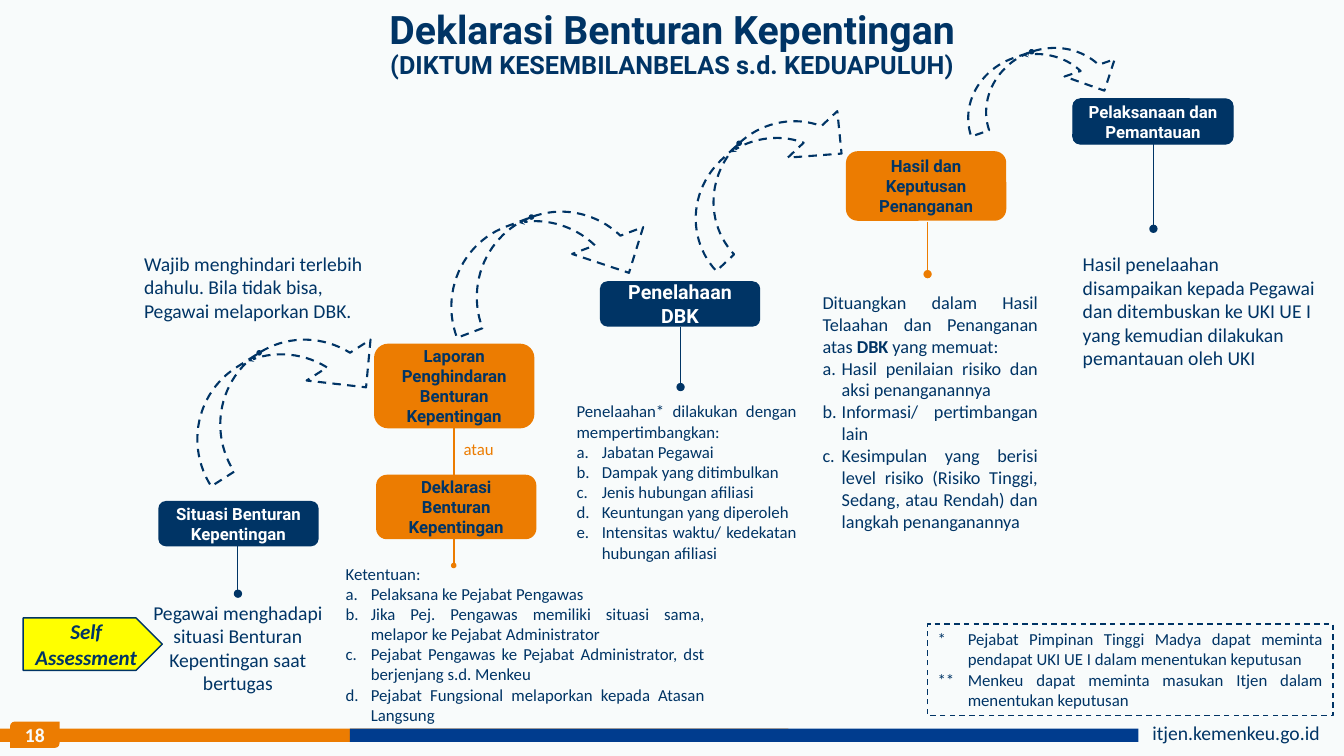
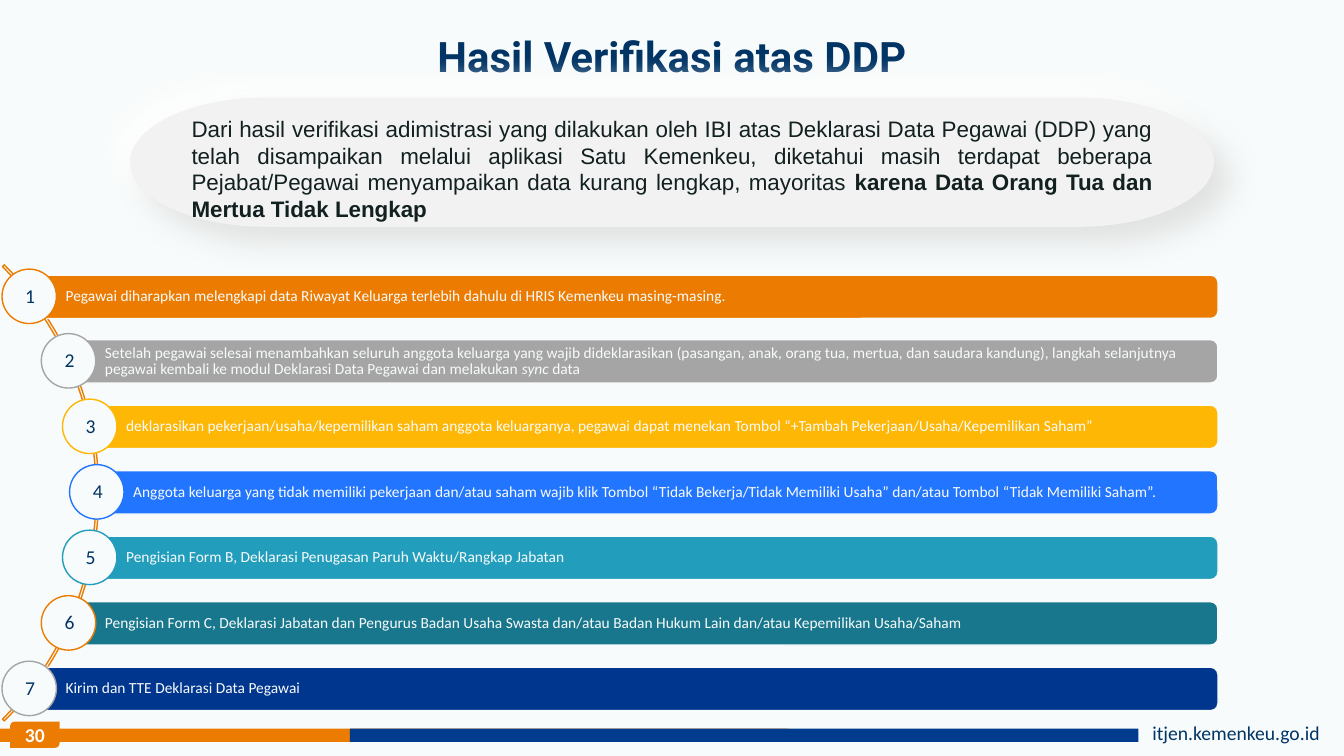
from lxml.etree import Element, SubElement
from pptx import Presentation
from pptx.dml.color import RGBColor
from pptx.enum.dml import MSO_LINE
from pptx.enum.shapes import MSO_CONNECTOR, MSO_SHAPE as SHAPE
from pptx.enum.text import MSO_ANCHOR as ANCHOR, MSO_AUTO_SIZE, PP_ALIGN as ALIGN
from pptx.oxml.ns import qn
from pptx.util import Pt

PX = 9144  # 100 px to the inch
COLORS = {
    "paper": "F8FBFB", "navy": "003465", "orange": "EC7C01", "blue": "003C8E",
    "white": "FFFFFF", "yellow": "FFFF00", "pill": "F2F2F2", "ink": "122020",
    "grey": "A5A5A5", "amber": "FEB705", "azure": "2275FE", "teal": "229EBC",
    "deep teal": "19778D", "royal": "01368F", "shade": "BFBFBF",
}
RGB = {name: RGBColor.from_string(code) for name, code in COLORS.items()}
TIGHT = (10, 10, 10, 10)


def box(s, kind, at, fill=None, line=None, weight=1, dash=False):
    """Add a preset shape, or a text box when kind is None."""
    at = [v * PX for v in at]
    if kind is None:
        return s.shapes.add_textbox(*at)
    sp = s.shapes.add_shape(kind, *at)
    sp.shadow.inherit = False
    if fill:
        sp.fill.solid()
        sp.fill.fore_color.rgb = RGB[fill]
    else:
        sp.fill.background()
    if line:
        sp.line.color.rgb = RGB[line]
        sp.line.width = Pt(weight)
        if dash:
            sp.line.dash_style = MSO_LINE.DASH
    else:
        sp.line.fill.background()
    return sp


def write(sp, paras, size, color="navy", font="Calibri", bold=False, italic=False,
          align=ALIGN.LEFT, anchor=ANCHOR.TOP, inset=(10, 5, 10, 5),
          hang=0, lettered=False, spacing=None, mark="bold"):
    """Fill a shape; text between bars gets the mark, letters start after the lead-in."""
    tf = sp.text_frame
    tf.word_wrap = True
    tf.auto_size = MSO_AUTO_SIZE.NONE
    tf.vertical_anchor = anchor
    tf.margin_left, tf.margin_top, tf.margin_right, tf.margin_bottom = [v * PX for v in inset]
    for i, text in enumerate(paras):
        p = tf.paragraphs[0] if i == 0 else tf.add_paragraph()
        p.alignment = align
        if spacing:
            p.line_spacing = spacing
        if hang and (i or not lettered):
            pPr = p._p.get_or_add_pPr()
            pPr.set("marL", str(hang * PX))
            pPr.set("indent", str(-hang * PX))
            if lettered:
                SubElement(pPr, qn("a:buAutoNum"), type="alphaLcPeriod")
        for j, part in enumerate(text.split("|")):
            r = p.add_run()
            r.text = part
            r.font.size, r.font.name = Pt(size), font
            r.font.bold, r.font.italic = bold, italic
            r.font.color.rgb = RGB[color]
            if j % 2:
                setattr(r.font, mark, True)


prs = Presentation()
prs.slide_width, prs.slide_height = 1333 * PX, 750 * PX
background = prs.slide_master.background.fill
background.solid()
background.fore_color.rgb = RGB["paper"]
layout = prs.slide_layouts[5]

# Titles and page numbers
pages = [
    ("18", "Deklarasi Benturan Kepentingan\v(DIKTUM KESEMBILANBELAS s.d. KEDUAPULUH)",
     (28, 18), (179, -4, 975, 98)),
    ("30", "Hasil Verifikasi atas DDP", (30,), (169, 9, 995, 98)),
]
for number, title, sizes, at in pages:
    s = prs.slides.add_slide(layout)
    sp = s.shapes.title
    sp.left, sp.top, sp.width, sp.height = [v * PX for v in at]
    tf = sp.text_frame
    tf.text = title
    tf.auto_size = MSO_AUTO_SIZE.NONE
    tf.vertical_anchor = ANCHOR.MIDDLE
    p = tf.paragraphs[0]
    p.alignment = ALIGN.CENTER
    p.line_spacing = 0.9
    for r, size in zip(p.runs, sizes):
        r.font.name, r.font.size, r.font.bold = "Roboto", Pt(size), True
        r.font.color.rgb = RGB["navy"]
    chip = box(s, SHAPE.ROUND_2_DIAG_RECTANGLE, (10, 716, 49, 26), "orange")
    write(chip, [number], 14, "paper", bold=True, align=ALIGN.CENTER,
          anchor=ANCHOR.MIDDLE, inset=(4, 0, 4, 0))

# Footer, moved into the layout that both slides use
s = prs.slides[0]
site = box(s, None, (1133, 710, 191, 54))
write(site, ["itjen.kemenkeu.go.id"], 14)
footer = [
    box(s, SHAPE.RECTANGLE, (0, 723, 782, 13), "orange"),
    box(s, SHAPE.RECTANGLE, (347, 723, 782, 13), "blue"),
    site,
]
for i, sp in enumerate(footer):
    sp.element.nvSpPr.cNvPr.set("id", str(101 + i))
    layout.shapes.element.append(sp.element)

# Declaration steps
drops = [
    (236, 533, 589, "navy", 0.75), (450, 417, 561, "orange", 1.5),
    (675, 324, 384, "navy", 0.75), (920, 220, 272, "orange", 0.75),
    (1144, 134, 227, "navy", 0.75),
]
for x, top, bottom, color, weight in drops:
    c = s.shapes.add_connector(MSO_CONNECTOR.STRAIGHT, x * PX, top * PX, x * PX, bottom * PX)
    c.line.color.rgb = RGB[color]
    c.line.width = Pt(weight)
    spPr = c.element.spPr
    dot = "sm" if weight > 1 else "med"
    SubElement(spPr.find(qn("a:ln")), qn("a:tailEnd"), type="oval", w=dot, len=dot)
    SubElement(spPr, qn("a:effectLst"))

steps = [
    ("Situasi Benturan Kepentingan", 157, 497, 45, "navy", None, 12),
    ("Laporan Penghindaran Benturan Kepentingan", 371, 341, 84, "orange", None, 12),
    ("Deklarasi Benturan Kepentingan", 373, 471, 64, "orange", None, 12),
    ("Penelahaan DBK", 595, 279, 45, "navy", None, 14),
    ("Hasil dan Keputusan Penanganan", 839, 150, 69, "orange", None, 12),
    ("Pelaksanaan dan Pemantauan", 1064, 98, 45, "navy", "navy", 12),
]
for text, x, y, h, fill, line, size in steps:
    write(box(s, SHAPE.ROUNDED_RECTANGLE, (x, y, 159, h), fill, line, 0.75), [text], size,
          "white" if fill == "navy" else "navy", "Roboto", bold=True,
          align=ALIGN.CENTER, anchor=ANCHOR.MIDDLE, inset=TIGHT)

write(box(s, None, (131, 608, 210, 69)),
      ["Pegawai menghadapi situasi Benturan Kepentingan saat bertugas"], 14,
      align=ALIGN.CENTER, anchor=ANCHOR.MIDDLE, inset=TIGHT)
write(box(s, None, (133, 250, 262, 69)),
      ["Wajib menghindari terlebih dahulu. Bila tidak bisa, Pegawai melaporkan DBK."], 14,
      anchor=ANCHOR.MIDDLE, inset=TIGHT)
write(box(s, None, (450, 430, 51, 30)), ["atau"], 12, "orange")
write(box(s, None, (1064, 245, 255, 148)),
      ["Hasil penelaahan disampaikan kepada Pegawai dan ditembuskan ke UKI UE I "
       "yang kemudian dilakukan pemantauan oleh UKI"], 14)

write(box(s, None, (562, 380, 238, 196)), [
    "Penelaahan* dilakukan dengan mempertimbangkan:",
    "Jabatan Pegawai",
    "Dampak yang ditimbulkan",
    "Jenis hubungan afiliasi",
    "Keuntungan yang diperoleh",
    "Intensitas waktu/ kedekatan hubungan afiliasi",
], 12, align=ALIGN.JUSTIFY, anchor=ANCHOR.MIDDLE, inset=TIGHT, hang=25, lettered=True)
write(box(s, None, (333, 551, 376, 176)), [
    "Ketentuan:",
    "Pelaksana ke Pejabat Pengawas",
    "Jika Pej. Pengawas memiliki situasi sama, melapor ke Pejabat Administrator",
    "Pejabat Pengawas ke Pejabat Administrator, dst berjenjang s.d. Menkeu",
    "Pejabat Fungsional melaporkan kepada Atasan Langsung",
], 12, align=ALIGN.JUSTIFY, anchor=ANCHOR.MIDDLE, inset=TIGHT, hang=25, lettered=True)
write(box(s, None, (806, 284, 233, 251)), [
    "Dituangkan dalam Hasil Telaahan dan Penanganan atas |DBK |yang memuat:",
    "Hasil penilaian risiko dan aksi penanganannya",
    "Informasi/ pertimbangan lain",
    "Kesimpulan yang berisi level risiko (Risiko Tinggi, Sedang, atau Rendah) "
    "dan langkah penanganannya",
], 13, align=ALIGN.JUSTIFY, hang=19, lettered=True)
write(box(s, SHAPE.RECTANGLE, (920, 619, 402, 91), "paper", "navy", dash=True), [
    "*\tPejabat Pimpinan Tinggi Madya dapat meminta pendapat UKI UE I "
    "dalam menentukan keputusan",
    "**\tMenkeu dapat meminta masukan Itjen dalam menentukan keputusan",
], 12, align=ALIGN.JUSTIFY, hang=30)

arrows = [
    ((236, 277, 86, 220), 237.4), ((498, 146, 86, 220), 249.3),
    ((720, 69, 77, 204), 226.8), ((1002, -3, 60, 166), 251),
]
for at, angle in arrows:
    sp = box(s, SHAPE.CURVED_LEFT_ARROW, at, None, "navy", 1.5, dash=True)
    sp.rotation = angle
    for i, value in enumerate((0.314, 0.876, 0.436)):
        sp.adjustments[i] = value
    ln = sp.element.spPr.find(qn("a:ln"))
    SubElement(ln, qn("a:headEnd"), type="oval", w="sm", len="sm")
    SubElement(ln, qn("a:tailEnd"), type="stealth", w="sm", len="sm")
write(box(s, SHAPE.PENTAGON, (23, 613, 138, 52), "yellow", "navy"), ["Self Assessment"], 15,
      bold=True, italic=True, align=ALIGN.CENTER, anchor=ANCHOR.MIDDLE)

# Verification finding on a pill with a light and a dark shadow
s = prs.slides[1]
left, top, right, bottom, middle = 129, 97, 1204, 225, 161
start = (left, middle)
outline = [  # end of each edge, and the corner that a curved edge rounds off
    ((263, top), (left, top)), ((1070, top), None),
    ((right, middle), (right, top)), ((1070, bottom), (right, bottom)),
    ((263, bottom), None), (start, (left, bottom)),
]
for color, alpha, angle in (("white", 100, 225), ("shade", 40, 45)):
    builder = s.shapes.build_freeform(*start, scale=PX)
    builder.add_line_segments([end for end, corner in outline])
    sp = builder.convert_to_shape()
    last = start
    for edge, (end, corner) in zip(list(sp.element.iter(qn("a:lnTo"))), outline):
        if corner:
            edge.tag = qn("a:cubicBezTo")
            for i, (px, py) in enumerate((last, end)):
                x = px + 0.55 * (corner[0] - px) - left
                y = py + 0.55 * (corner[1] - py) - top
                edge.insert(i, Element(qn("a:pt"), x=str(round(x)), y=str(round(y))))
        last = end
    sp.fill.solid()
    sp.fill.fore_color.rgb = RGB["pill"]
    sp.line.fill.background()
    sp.shadow.inherit = False
    effects = sp.element.spPr.find(qn("a:effectLst"))
    shadow = SubElement(effects, qn("a:outerShdw"), blurRad=str(Pt(20)), dist=str(Pt(15)),
                        dir=str(angle * 60000), algn="ctr", rotWithShape="0")
    tint = SubElement(shadow, qn("a:srgbClr"), val=COLORS[color])
    SubElement(tint, qn("a:alpha"), val=str(alpha * 1000))
write(box(s, None, (190, 109, 953, 118)), [
    "Dari hasil verifikasi adimistrasi yang dilakukan oleh IBI atas Deklarasi Data Pegawai "
    "(DDP) yang telah disampaikan melalui aplikasi Satu Kemenkeu, diketahui masih terdapat "
    "beberapa Pejabat/Pegawai menyampaikan data kurang lengkap, mayoritas "
    "|karena Data Orang Tua dan Mertua Tidak Lengkap",
], 16, "ink", "Arial", align=ALIGN.JUSTIFY, inset=(0, 5, 0, 5))

# Numbered actions along an arc
arc = box(s, SHAPE.BLOCK_ARC, (-542, 169, 640, 640), None, "orange")
for i, value in enumerate((189, 27, 0.004)):
    arc.adjustments[i] = value
actions = [
    (29, "orange", "orange", "Pegawai diharapkan melengkapi data Riwayat Keluarga terlebih "
     "dahulu di HRIS Kemenkeu masing-masing."),
    (68, "grey", "grey", "Setelah pegawai selesai menambahkan seluruh anggota keluarga yang "
     "wajib dideklarasikan (pasangan, anak, orang tua, mertua, dan saudara kandung), langkah "
     "selanjutnya pegawai kembali ke modul Deklarasi Data Pegawai dan melakukan |sync| data"),
    (89, "amber", "amber", "deklarasikan pekerjaan/usaha/kepemilikan saham anggota keluarganya, "
     "pegawai dapat menekan Tombol “+Tambah Pekerjaan/Usaha/Kepemilikan Saham”"),
    (96, "azure", "azure", "Anggota keluarga yang tidak memiliki pekerjaan dan/atau saham wajib "
     "klik Tombol “Tidak Bekerja/Tidak Memiliki Usaha” dan/atau Tombol “Tidak Memiliki Saham”."),
    (89, "teal", "teal", "Pengisian Form B, Deklarasi Penugasan Paruh Waktu/Rangkap Jabatan"),
    (68, "deep teal", "orange", "Pengisian Form C, Deklarasi Jabatan dan Pengurus Badan Usaha "
     "Swasta dan/atau Badan Hukum Lain dan/atau Kepemilikan Usaha/Saham"),
    (29, "royal", "grey", "Kirim dan TTE Deklarasi Data Pegawai"),
]
for i, (x, fill, ring, text) in enumerate(actions):
    y = int(273 + 64.85 * i)
    bar = box(s, SHAPE.ROUNDED_RECTANGLE, (x, y, 1208 - x, 43), fill, "paper")
    write(bar, [text], 11, "paper", anchor=ANCHOR.MIDDLE, inset=(34, 3, 3, 3),
          spacing=0.9, mark="italic")
    circle = box(s, SHAPE.OVAL, (x - 27, y - 6, 54, 54), "paper", ring)
    write(circle, [str(i + 1)], 14, align=ALIGN.CENTER, anchor=ANCHOR.MIDDLE,
          inset=(2, 0, 0, 2))

prs.save("out.pptx")
